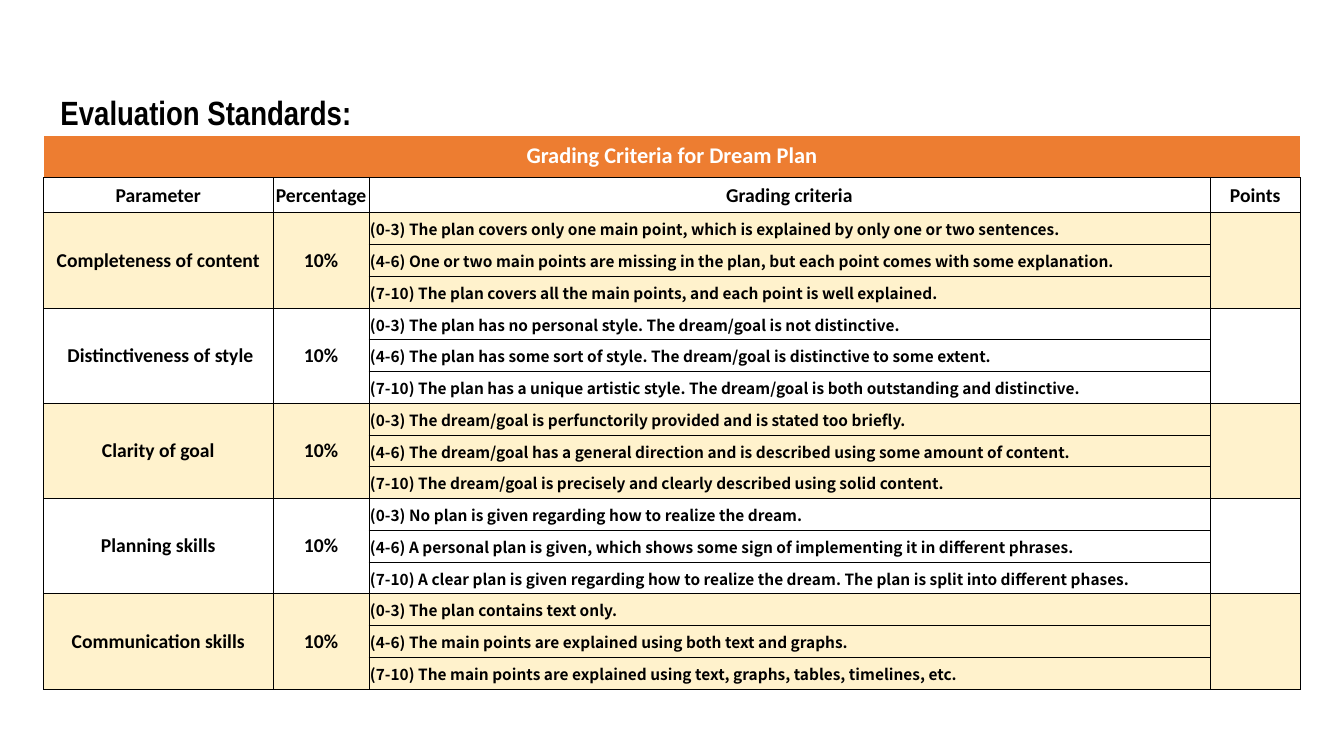
import pptx
import pptx.util
import pptx.dml.color
import pptx.enum.text
import pptx.oxml
import pptx.oxml.ns

Inches, Pt = pptx.util.Inches, pptx.util.Pt
ALIGN, ANCHOR = pptx.enum.text.PP_ALIGN, pptx.enum.text.MSO_ANCHOR

# Content
TITLE = "Evaluation Standards:"
TABLE_TITLE = "Grading Criteria for Dream Plan"
HEADINGS = ["Parameter", "Percentage", "Grading criteria", "Points"]
PARAMETERS = [
    ("Completeness of content", "10%", [
        "(0-3) The plan covers only one main point, which is explained by only one or two sentences.",
        "(4-6) One or two main points are missing in the plan, but each point comes with some explanation.",
        "(7-10) The plan covers all the main points, and each point is well explained."]),
    (" Distinctiveness of style", "10%", [
        "(0-3) The plan has no personal style. The dream/goal is not distinctive.",
        "(4-6) The plan has some sort of style. The dream/goal is distinctive to some extent.",
        "(7-10) The plan has a unique artistic style. The dream/goal is both outstanding and distinctive."]),
    ("Clarity of goal", "10%", [
        "(0-3) The dream/goal is perfunctorily provided and is stated too briefly.",
        "(4-6) The dream/goal has a general direction and is described using some amount of content.",
        "(7-10) The dream/goal is precisely and clearly described using solid content."]),
    ("Planning skills", "10%", [
        "(0-3) No plan is given regarding how to realize the dream.",
        "(4-6) A personal plan is given, which shows some sign of implementing it in different phrases.",
        "(7-10) A clear plan is given regarding how to realize the dream. "
        "The plan is split into different phases."]),
    ("Communication skills", "10%", [
        "(0-3) The plan contains text only.",
        "(4-6) The main points are explained using both text and graphs.",
        "(7-10) The main points are explained using text, graphs, tables, timelines, etc."]),
]

# Look
COLORS = {"text": "000000", "header": "ED7D31", "header text": "FFFFFF",
          "band": "FFF2CC", "plain": "FFFFFF", "border": "000000"}
COLUMN_WIDTHS = [2.28, 0.95, 8.34, 0.9]
TITLE_ROW, HEADING_ROW, TABLE_HEIGHT = 0.42, 0.35, 5.5
LEVELS = 3
WIDE_MARGINS = (0.11, 0.06, 0.11, 0.06)
TIGHT_MARGINS = (0.01, 0.01, 0.01, 0)


def set_font(paragraph, name, size, color):
    paragraph.font.name = name
    paragraph.font.size = Pt(size)
    paragraph.font.bold = True
    paragraph.font.color.rgb = pptx.dml.color.RGBColor.from_string(COLORS[color])


def set_margins(target, margins):
    (target.margin_left, target.margin_top,
     target.margin_right, target.margin_bottom) = map(Inches, margins)


def add_borders(cell, sides):
    properties = cell._tc.get_or_add_tcPr()
    for side in sides:
        properties.append(pptx.oxml.parse_xml(
            f'<a:ln{side} {pptx.oxml.ns.nsdecls("a")} w="{Pt(0.5)}"><a:solidFill>'
            f'<a:srgbClr val="{COLORS["border"]}"/></a:solidFill></a:ln{side}>'))


def format_cell(cell, text, fill, margins=WIDE_MARGINS, font="Calibri", size=14,
                color="text", align=ALIGN.CENTER, sides="LRTB"):
    add_borders(cell, sides)
    cell.fill.solid()
    cell.fill.fore_color.rgb = pptx.dml.color.RGBColor.from_string(COLORS[fill])
    cell.vertical_anchor = ANCHOR.MIDDLE
    set_margins(cell, margins)
    cell.text = text
    paragraph = cell.text_frame.paragraphs[0]
    paragraph.alignment = align
    set_font(paragraph, font, size, color)


presentation = pptx.Presentation()
presentation.slide_width, presentation.slide_height = Inches(13.33), Inches(7.5)
slide = presentation.slides.add_slide(presentation.slide_layouts[5])

# Title
title = slide.shapes.title
title.left, title.top, title.width, title.height = map(Inches, (0.5, 0.75, 6.16, 0.63))
frame = title.text_frame
frame.text = TITLE
frame.word_wrap = True
frame.auto_size = pptx.enum.text.MSO_AUTO_SIZE.NONE
frame.vertical_anchor = ANCHOR.TOP
set_margins(frame, [0.1] * 4)
paragraph = frame.paragraphs[0]
paragraph.alignment = ALIGN.LEFT
paragraph.line_spacing = 1.15
paragraph.space_before, paragraph.space_after = Pt(0), Pt(16)
set_font(paragraph, "Arial Narrow", 24, "text")

# Table grid
level_rows = len(PARAMETERS) * LEVELS
level_height = (TABLE_HEIGHT - TITLE_ROW - HEADING_ROW) / level_rows
row_heights = [TITLE_ROW, HEADING_ROW] + [level_height] * level_rows
table = slide.shapes.add_table(
    len(row_heights), len(COLUMN_WIDTHS), Inches(0.43), Inches(1.34),
    Inches(sum(COLUMN_WIDTHS)), Inches(TABLE_HEIGHT)).table
table.first_row = table.horz_banding = False
for column, width in zip(table.columns, COLUMN_WIDTHS):
    column.width = Inches(width)
for row, height in zip(table.rows, row_heights):
    row.height = Inches(height)

# Header rows
for column, heading in enumerate(HEADINGS):
    format_cell(table.cell(0, column), "" if column else TABLE_TITLE, "header",
                size=16, color="header text", sides="B")
    format_cell(table.cell(1, column), heading, "plain", TIGHT_MARGINS)
table.cell(0, 0).merge(table.cell(0, len(HEADINGS) - 1))

# One group of rows per parameter
for group, (parameter, percentage, criteria) in enumerate(PARAMETERS):
    first = 2 + group * LEVELS
    fill = "plain" if group % 2 else "band"
    for level, criterion in enumerate(criteria):
        row = first + level
        for column, text in ((0, parameter), (1, percentage), (3, "")):
            format_cell(table.cell(row, column), "" if level else text, fill,
                        TIGHT_MARGINS if level else WIDE_MARGINS)
        format_cell(table.cell(row, 2), criterion, fill, TIGHT_MARGINS,
                    "Noto Sans CJK SC", 11, align=ALIGN.LEFT)
    for column in (0, 1, 3):
        table.cell(first, column).merge(table.cell(first + LEVELS - 1, column))

presentation.save("out.pptx")
